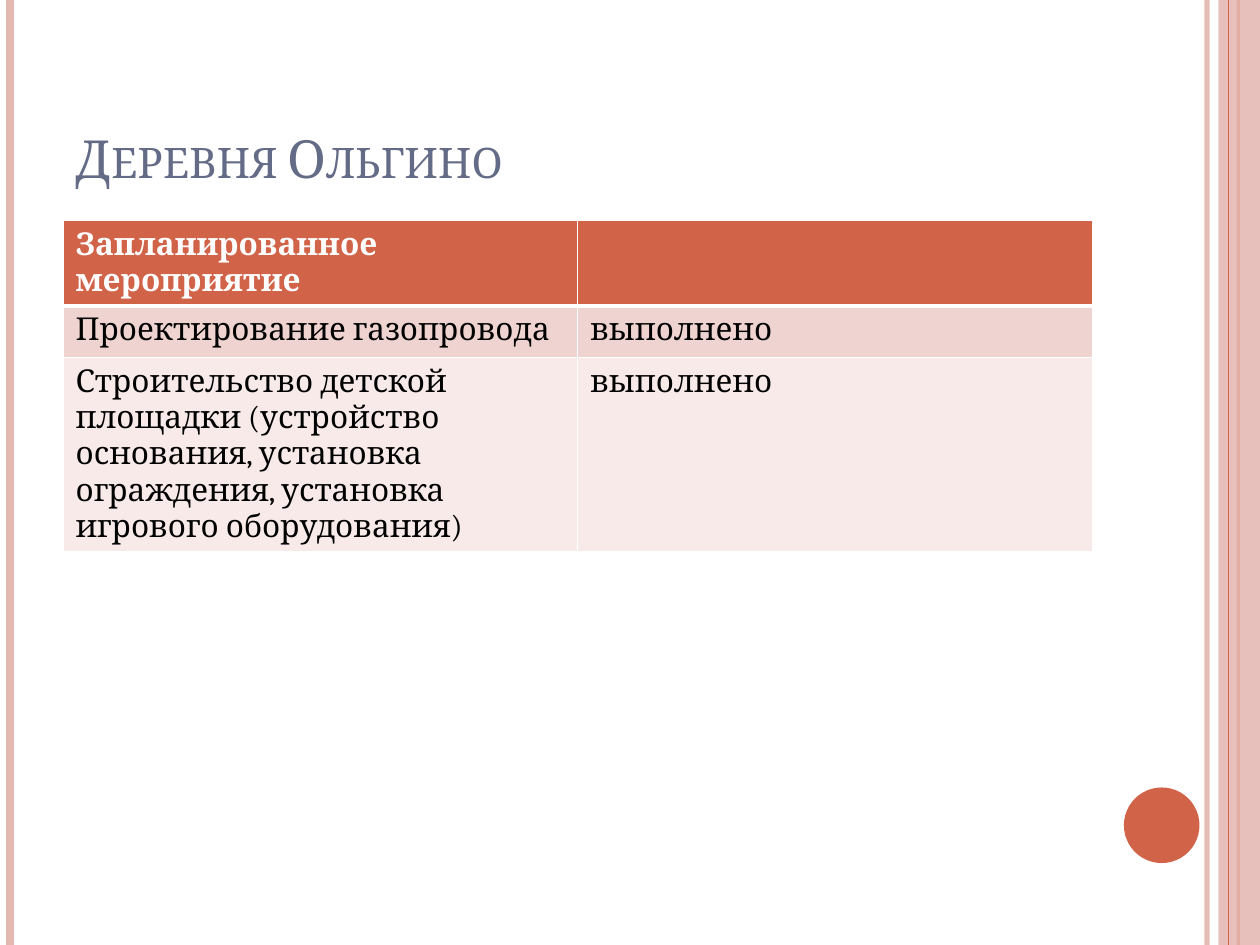
from lxml.etree import SubElement
from pptx import Presentation
from pptx.dml.color import RGBColor
from pptx.enum.shapes import MSO_CONNECTOR, MSO_SHAPE
from pptx.enum.text import MSO_ANCHOR, MSO_AUTO_SIZE, PP_ALIGN
from pptx.oxml import parse_xml
from pptx.oxml.ns import nsdecls, qn
from pptx.util import Inches, Pt

FONT = "Cambria"
COLORS = {
    "accent": "D16349", "pink": "E5B7B1", "title": "646B86",
    "band": "EED3D0", "light": "F7EAE9", "white": "FFFFFF", "black": "000000",
}
ROWS = [
    ("Запланированное мероприятие", ""),
    ("Проектирование газопровода", "выполнено"),
    ("Строительство детской площадки (устройство основания, "
     "установка ограждения, установка игрового оборудования)", "выполнено"),
]
ROW_FILLS = ["accent", "band", "light"]


def rgb(name):
    return RGBColor.from_string(COLORS[name])


def set_alpha(element, percent):
    """Make the solid colour inside element partly transparent."""
    color = next(element.iter(qn("a:srgbClr")))
    SubElement(color, qn("a:alpha"), val=str(percent * 1000))


def format_run(r, color, **values):
    for name, value in {"name": FONT, **values}.items():
        setattr(r.font, name, value)
    r.font.color.rgb = rgb(color)


def add_stripe(s, x, color, width, alpha=100):
    """Draw a vertical line over the full slide height."""
    line = s.shapes.add_connector(
        MSO_CONNECTOR.STRAIGHT, Inches(x), 0, Inches(x), Inches(7.5))
    line.line.color.rgb = rgb(color)
    line.line.width = Pt(width)
    if alpha < 100:
        set_alpha(line.line._get_or_add_ln(), alpha)
    SubElement(line._element.spPr, qn("a:effectLst"))


def add_filled_shape(s, kind, box, color, alpha=100):
    sp = s.shapes.add_shape(kind, *map(Inches, box))
    sp.shadow.inherit = False
    sp.fill.solid()
    sp.fill.fore_color.rgb = rgb(color)
    sp.line.fill.background()
    if alpha < 100:
        set_alpha(sp._element.spPr, alpha)


def set_title(s, text):
    title = s.shapes.title
    title.left, title.top, title.width, title.height = map(
        Inches, (0.5, 0.3, 8.17, 1.25))
    tf = title.text_frame
    tf.vertical_anchor = MSO_ANCHOR.BOTTOM
    tf.word_wrap = True
    tf.auto_size = MSO_AUTO_SIZE.NONE
    p = tf.paragraphs[0]
    p.alignment = PP_ALIGN.LEFT
    r = p.add_run()
    r.text = text
    format_run(r, "title", size=Pt(30))
    r.font._element.set("cap", "small")


def set_borders(cell, top, bottom):
    """Give the cell white borders; widths are in points."""
    tc_pr = cell._tc.get_or_add_tcPr()
    widths = {"lnL": 1, "lnR": 1, "lnT": top, "lnB": bottom}
    for i, (tag, width) in enumerate(widths.items()):
        tc_pr.insert(i, parse_xml(
            f'<a:{tag} {nsdecls("a")} w="{Pt(width)}"><a:solidFill>'
            f'<a:srgbClr val="{COLORS["white"]}"/></a:solidFill></a:{tag}>'))


def add_plan_table(s):
    frame = s.shapes.add_table(
        len(ROWS), 2, Inches(0.5), Inches(1.75), Inches(8.17), Inches(1.23))
    table = frame.table
    for row in table.rows:
        row.height = Inches(0.41)
    for i, (texts, fill) in enumerate(zip(ROWS, ROW_FILLS)):
        header = i == 0
        for j, text in enumerate(texts):
            cell = table.cell(i, j)
            cell.fill.solid()
            cell.fill.fore_color.rgb = rgb(fill)
            set_borders(cell, top=3 if i == 1 else 1, bottom=3 if header else 1)
            if text:
                r = cell.text_frame.paragraphs[0].add_run()
                r.text = text
                format_run(r, "white" if header else "black",
                           size=Pt(18), bold=header)


def main():
    prs = Presentation()
    prs.slide_width, prs.slide_height = Inches(10), Inches(7.5)
    s = prs.slides.add_slide(prs.slide_layouts[5])
    add_stripe(s, 9.58, "pink", 3, alpha=93)
    add_stripe(s, 0.08, "pink", 4.5)
    add_stripe(s, 9.83, "accent", 1.5)
    add_filled_shape(s, MSO_SHAPE.RECTANGLE, (9.67, 0, 0.33, 7.5), "pink", alpha=87)
    add_stripe(s, 9.75, "accent", 0.75)
    add_filled_shape(s, MSO_SHAPE.OVAL, (8.92, 6.25, 0.6, 0.6), "accent")
    set_title(s, "Деревня Ольгино")
    add_plan_table(s)
    prs.save("out.pptx")


if __name__ == "__main__":
    main()
